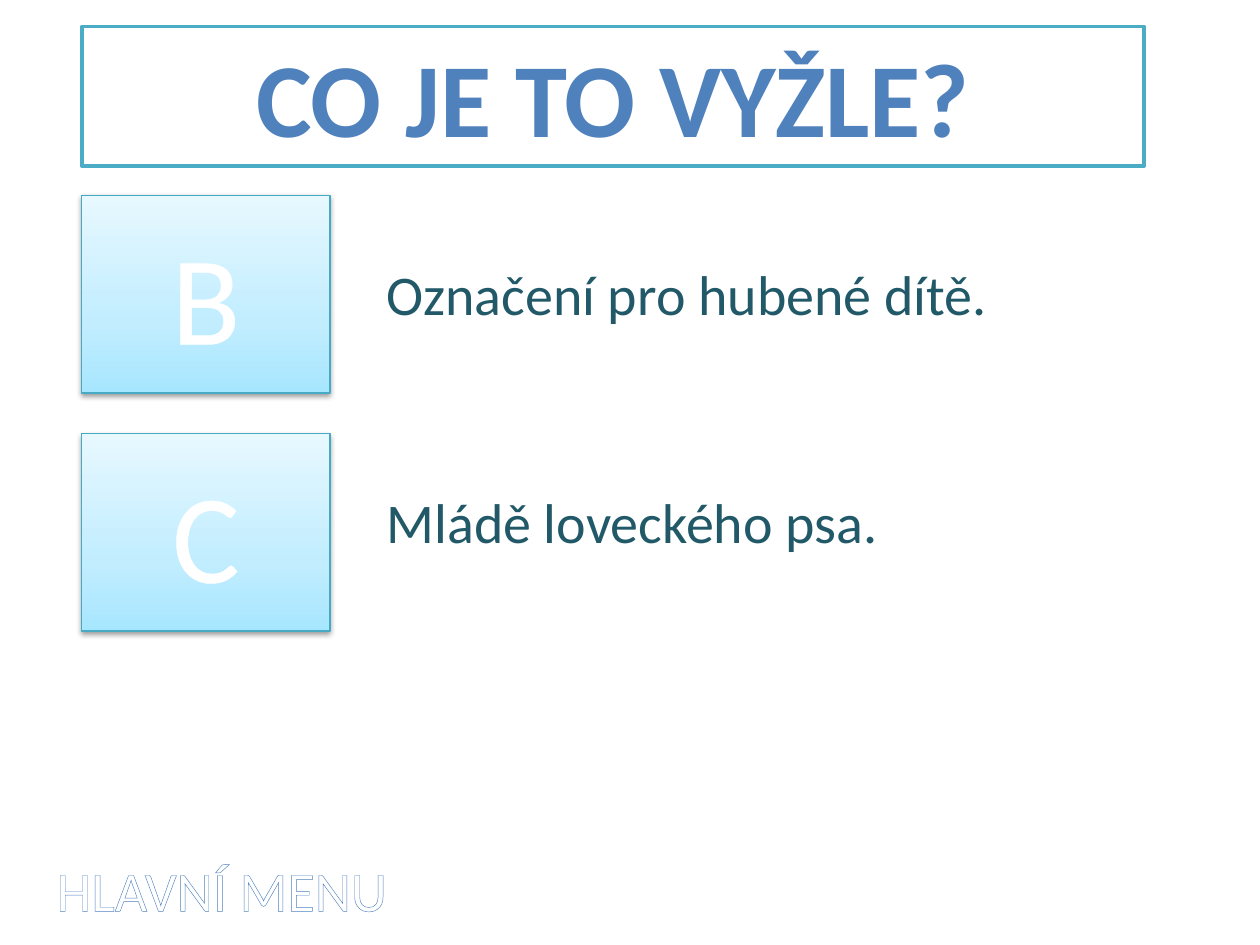
from pptx import Presentation
from pptx.dml.color import RGBColor
from pptx.enum.shapes import MSO_SHAPE
from pptx.enum.text import MSO_ANCHOR, PP_ALIGN
from pptx.oxml import parse_xml
from pptx.oxml.ns import nsdecls
from pptx.util import Pt

COLORS = {
    "white": "FFFFFF", "teal": "4BACC6", "blue": "4F81BD", "dark": "215968",
    "edge": "46AAC5", "low": "A7E6FF", "middle": "C1EDFF", "high": "E7F8FF",
    "shadow": "000000",
}


def write(box, text, size, color, align, anchor, bold=False, outline=None):
    frame = box.text_frame
    frame.word_wrap = True
    frame.vertical_anchor = anchor
    para = frame.paragraphs[0]
    para.alignment = align
    span = para.add_run()
    span.text = text
    formats = {"name": "Calibri", "size": Pt(size), "bold": bold}
    for name, value in formats.items():
        setattr(span.font, name, value)
    span.font.color.rgb = RGBColor.from_string(COLORS[color])
    if outline:
        line_color, width = outline
        span.font._element.insert(0, parse_xml(
            f'<a:ln {nsdecls("a")} w="{Pt(width)}"><a:solidFill>'
            f'<a:srgbClr val="{COLORS[line_color]}"/></a:solidFill></a:ln>'))


def add_text(page, place, text, color, outline=None):
    box = page.shapes.add_textbox(*[Pt(length) for length in place])
    write(box, text, 32, color, PP_ALIGN.LEFT, MSO_ANCHOR.TOP, outline=outline)


deck = Presentation()
deck.slide_width, deck.slide_height = Pt(720), Pt(540)
page = deck.slides.add_slide(deck.slide_layouts[5])

title = page.shapes.title
place = {"left": 46.8, "top": 15.1, "width": 607, "height": 79.9}
for name, value in place.items():
    setattr(title, name, Pt(value))
title.fill.solid()
title.fill.fore_color.rgb = RGBColor.from_string(COLORS["white"])
title.line.color.rgb = RGBColor.from_string(COLORS["teal"])
title.line.width = Pt(2)
write(title, "CO JE TO VYŽLE?", 60, "blue", PP_ALIGN.CENTER, MSO_ANCHOR.TOP, bold=True)

add_text(page, (25.2, 485.3, 470.9, 46), "HLAVNÍ MENU", "white", ("blue", 0.8))

stops = "".join(
    f'<a:gs pos="{position * 1000}"><a:srgbClr val="{COLORS[color]}"/></a:gs>'
    for position, color in [(0, "low"), (35, "middle"), (100, "high")])
answers = [
    ("B", 111.6, "Označení pro hubené dítě.", 144.7, 487.4),
    ("C", 247.7, "Mládě loveckého psa.", 275, 504.7),
]
for letter, tile_top, answer, answer_top, answer_width in answers:
    tile = page.shapes.add_shape(
        MSO_SHAPE.RECTANGLE, Pt(46.8), Pt(tile_top), Pt(141.8), Pt(113))
    properties = tile._element.spPr
    properties.insert(2, parse_xml(
        f'<a:gradFill {nsdecls("a")} rotWithShape="1"><a:gsLst>{stops}</a:gsLst>'
        '<a:lin ang="16200000" scaled="0"/></a:gradFill>'))
    tile.line.color.rgb = RGBColor.from_string(COLORS["edge"])
    tile.line.width = Pt(0.75)
    properties.append(parse_xml(
        f'<a:effectLst {nsdecls("a")}><a:outerShdw blurRad="{Pt(3.1)}" dist="{Pt(1.6)}" '
        f'dir="5400000" rotWithShape="0"><a:srgbClr val="{COLORS["shadow"]}">'
        '<a:alpha val="38000"/></a:srgbClr></a:outerShdw></a:effectLst>'))
    write(tile, letter, 72, "white", PP_ALIGN.CENTER, MSO_ANCHOR.MIDDLE,
          outline=("white", 1.45))
    add_text(page, (213.8, answer_top, answer_width, 46), answer, "dark")

deck.save("out.pptx")
